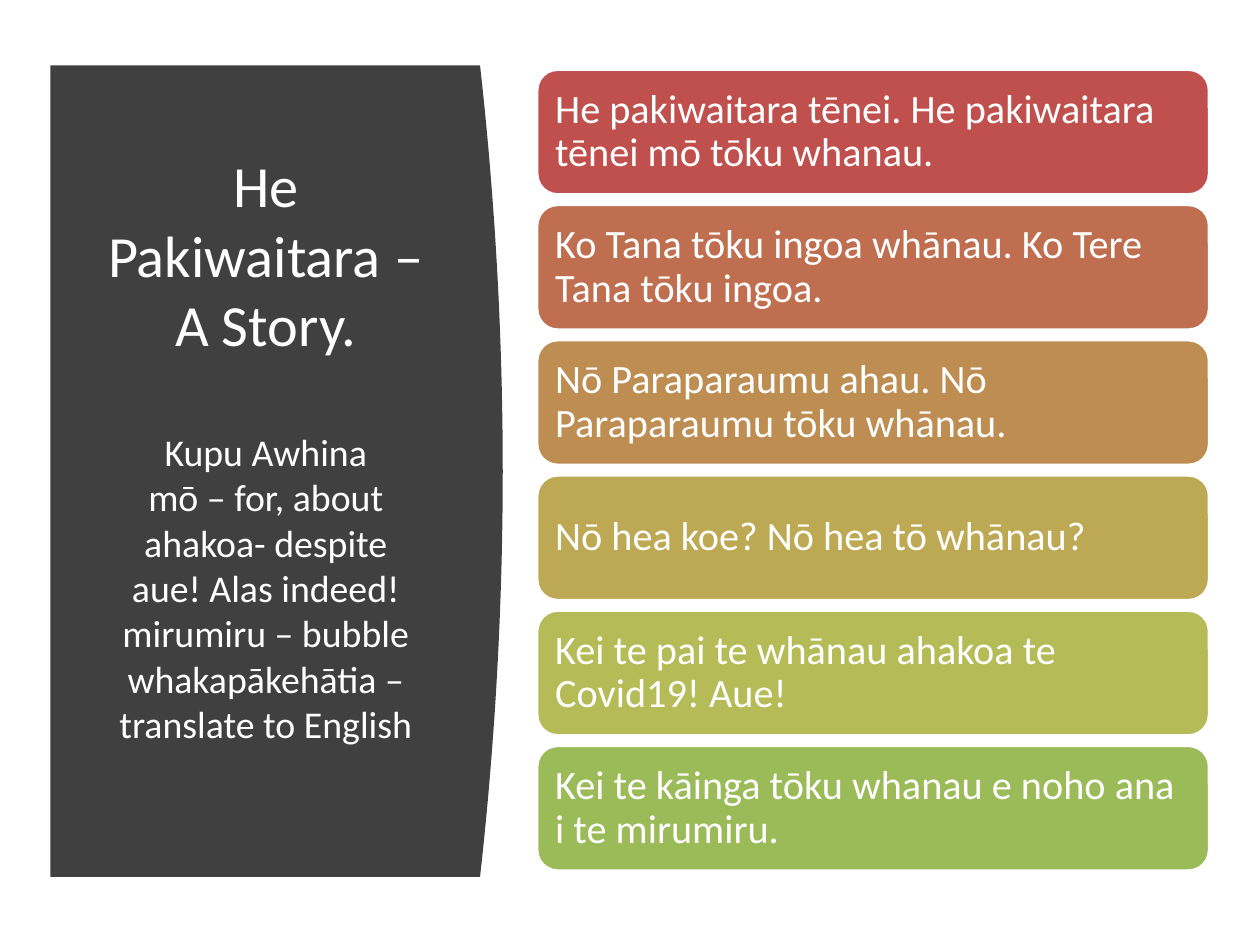
import pptx
import pptx.dml.color
import pptx.enum.shapes
import pptx.enum.text
import pptx.util

ALIGN = pptx.enum.text.PP_ALIGN


def colour(hex_code):
    return pptx.dml.color.RGBColor.from_string(hex_code)


class Page:
    """Style and current slide; lengths are percentages of the slide's size."""

    FONT = "Calibri"
    LIGHT = "FFFFFF"
    DARK = "404040"

    def __init__(self, deck):
        self.width, self.height = deck.slide_width, deck.slide_height
        self.shapes = deck.slides.add_slide(deck.slide_layouts[6]).shapes

    def x(self, share):
        return round(self.width * share / 100)

    def y(self, share):
        return round(self.height * share / 100)

    def area(self, left, top, width, height):
        return self.x(left), self.y(top), self.x(width), self.y(height)

    def style_paragraph(self, paragraph, text, size, align):
        paragraph.text = text
        paragraph.alignment = align
        paragraph.font.name = self.FONT
        paragraph.font.size = pptx.util.Pt(size)
        paragraph.font.color.rgb = colour(self.LIGHT)

    def curved_panel(self, left, top, width, height, bulge, steps=40):
        """Draw a panel whose right side bows out as a parabola."""
        edge = []
        for step in range(steps + 1):
            offset = 2 * step / steps - 1
            edge.append((self.x(left + width - bulge * offset ** 2),
                         self.y(top + height * step / steps)))
        outline = self.shapes.build_freeform(self.x(left), self.y(top))
        outline.add_line_segments(edge + [(self.x(left), self.y(top + height))])
        panel = outline.convert_to_shape()
        panel.shadow.inherit = False
        panel.fill.solid()
        panel.fill.fore_color.rgb = colour(self.DARK)
        panel.line.fill.background()

    def heading(self, area, title, glossary):
        frame = self.shapes.add_textbox(*self.area(*area)).text_frame
        frame.word_wrap = True
        frame.vertical_anchor = pptx.enum.text.MSO_ANCHOR.MIDDLE
        self.style_paragraph(frame.paragraphs[0], title, 33.3, ALIGN.CENTER)
        frame.paragraphs[0].space_after = pptx.util.Pt(40)
        for entry in glossary:
            self.style_paragraph(frame.add_paragraph(), entry, 21.6, ALIGN.CENTER)

    def sentence_bar(self, area, sentence, fill):
        bar = self.shapes.add_shape(
            pptx.enum.shapes.MSO_SHAPE.ROUNDED_RECTANGLE, *self.area(*area))
        bar.shadow.inherit = False
        bar.fill.solid()
        bar.fill.fore_color.rgb = colour(fill)
        bar.line.color.rgb = colour(self.LIGHT)
        bar.line.width = pptx.util.Pt(2)
        frame = bar.text_frame
        frame.word_wrap = True
        frame.vertical_anchor = pptx.enum.text.MSO_ANCHOR.MIDDLE
        frame.margin_left = frame.margin_right = pptx.util.Inches(0.1)
        frame.margin_top = frame.margin_bottom = pptx.util.Inches(0.1)
        self.style_paragraph(frame.paragraphs[0], sentence, 23, ALIGN.LEFT)
        frame.paragraphs[0].line_spacing = 0.9


GLOSSARY = [
    "Kupu Awhina",
    "mō – for, about",
    "ahakoa- despite",
    "aue! Alas indeed!",
    "mirumiru – bubble",
    "whakapākehātia – translate to English",
]

STORY = [
    ("He pakiwaitara tēnei. He pakiwaitara tēnei mō tōku whanau.", "C0504D"),
    ("Ko Tana tōku ingoa whānau. Ko Tere Tana tōku ingoa.", "BF6F4F"),
    ("Nō Paraparaumu ahau. Nō Paraparaumu tōku whānau.", "BE8D52"),
    ("Nō hea koe? Nō hea tō whānau?", "BDA954"),
    ("Kei te pai te whānau ahakoa te Covid19! Aue!", "B5BC57"),
    ("Kei te kāinga tōku whanau e noho ana i te mirumiru.", "9BBB59"),
]
FIRST_BAR_TOP, BAR_HEIGHT, BAR_PITCH = 7.33, 13.3, 14.31


def main():
    deck = pptx.Presentation()
    deck.slide_width = pptx.util.Inches(10)
    deck.slide_height = pptx.util.Inches(7.5)
    page = Page(deck)
    page.curved_panel(4, 6.93, 35.9, 85.87, bulge=1.8)
    page.heading((7.1, 14.8, 28, 65.1), "He Pakiwaitara – A Story.", GLOSSARY)
    for row, (sentence, fill) in enumerate(STORY):
        top = FIRST_BAR_TOP + row * BAR_PITCH
        page.sentence_bar((42.6, top, 53.4, BAR_HEIGHT), sentence, fill)
    deck.save("out.pptx")


if __name__ == "__main__":
    main()
